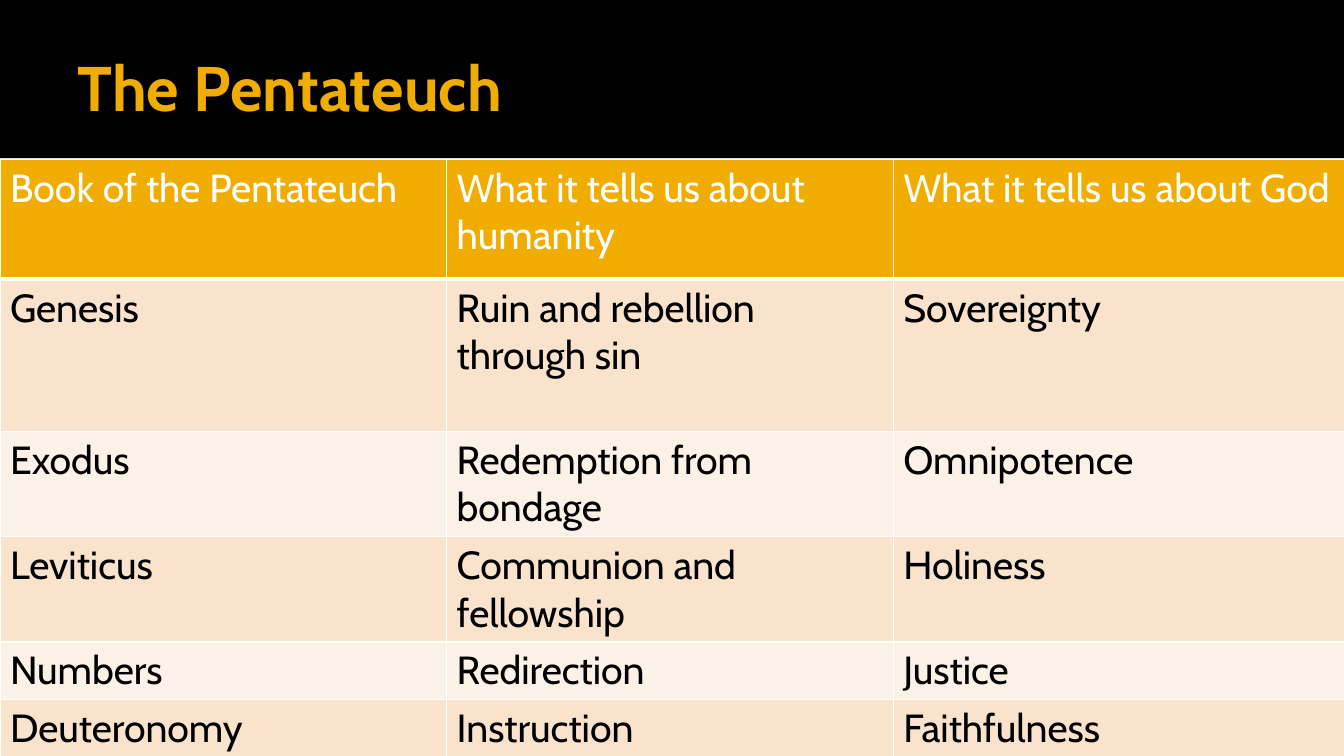
import pptx
import pptx.util
from lxml import etree
from pptx.dml.color import RGBColor
from pptx.enum.shapes import MSO_SHAPE
from pptx.enum.text import MSO_ANCHOR, MSO_AUTO_SIZE, PP_ALIGN
from pptx.oxml.ns import qn
from pptx.util import Inches

FONT = "Cabin"
GOLD = RGBColor(0xF0, 0xAD, 0x00)
PEACH = RGBColor(0xF9, 0xE3, 0xCC)
CREAM = RGBColor(0xFC, 0xF1, 0xE7)
BLACK = RGBColor(0, 0, 0)
WHITE = RGBColor(0xFF, 0xFF, 0xFF)

COLUMN_WIDTHS = [4.43, 4.43, 4.48]
ROW_HEIGHTS = [1.19, 1.51, 1.04, 1.04, 0.57, 0.55]
BOOKS = [
    ("Book of the Pentateuch", "What it tells us about humanity", "What it tells us about God"),
    ("Genesis", "Ruin and rebellion through sin", "Sovereignty"),
    ("Exodus", "Redemption from bondage", "Omnipotence"),
    ("Leviticus", "Communion and fellowship", "Holiness"),
    ("Numbers", "Redirection", "Justice"),
    ("Deuteronomy", "Instruction", "Faithfulness"),
]


def add_band(page, top, height, color):
    """Add a plain rectangle across the full slide width."""
    band = page.shapes.add_shape(
        MSO_SHAPE.RECTANGLE, 0, Inches(top), Inches(13.33), Inches(height))
    band.shadow.inherit = False
    band.fill.solid()
    band.fill.fore_color.rgb = color
    band.line.fill.background()


def set_font(para, size, color, bold=False):
    para.font.name = FONT
    para.font.size = pptx.util.Pt(size)
    para.font.color.rgb = color
    para.font.bold = bold


def place_title(page, text):
    title = page.shapes.title
    title.left, title.top = Inches(0.67), Inches(0.17)
    title.width, title.height = Inches(12), Inches(1.37)
    frame = title.text_frame
    frame.text = text
    frame.auto_size = MSO_AUTO_SIZE.NONE
    frame.vertical_anchor = MSO_ANCHOR.MIDDLE
    frame.margin_left = Inches(0.1)
    frame.margin_top = frame.margin_right = frame.margin_bottom = Inches(0.05)
    frame.paragraphs[0].alignment = PP_ALIGN.LEFT
    set_font(frame.paragraphs[0], 45, GOLD, bold=True)
    # Bring the title in front of the bands.
    page.shapes._spTree.append(title._element)


def set_borders(cell, bottom_width):
    """Draw white cell borders, 1 pt except at the bottom."""
    properties = cell._tc.get_or_add_tcPr()
    widths = {"a:lnL": 1, "a:lnR": 1, "a:lnT": 1, "a:lnB": bottom_width}
    for position, (tag, width) in enumerate(widths.items()):
        border = etree.Element(qn(tag), w=str(pptx.util.Pt(width)))
        fill = etree.SubElement(border, qn("a:solidFill"))
        etree.SubElement(fill, qn("a:srgbClr"), val=str(WHITE))
        properties.insert(position, border)


def add_book_table(page):
    table = page.shapes.add_table(
        len(BOOKS), len(COLUMN_WIDTHS), 0, Inches(1.58), Inches(13.33), Inches(5.92)).table
    for column, width in zip(table.columns, COLUMN_WIDTHS):
        column.width = Inches(width)
    for row_index, (row, height) in enumerate(zip(table.rows, ROW_HEIGHTS)):
        row.height = Inches(height)
        is_header = row_index == 0
        color = GOLD if is_header else (CREAM, PEACH)[row_index % 2]
        for cell, text in zip(row.cells, BOOKS[row_index]):
            cell.text = text
            cell.fill.solid()
            cell.fill.fore_color.rgb = color
            set_font(cell.text_frame.paragraphs[0], 28, WHITE if is_header else BLACK)
            set_borders(cell, 3 if is_header else 1)


def main():
    deck = pptx.Presentation()
    deck.slide_width, deck.slide_height = Inches(13.33), Inches(7.5)
    page = deck.slides.add_slide(deck.slide_layouts[5])
    add_band(page, 1.57, 0.05, WHITE)
    add_band(page, 0, 1.57, BLACK)
    place_title(page, "The Pentateuch")
    add_book_table(page)
    deck.save("out.pptx")


if __name__ == "__main__":
    main()
